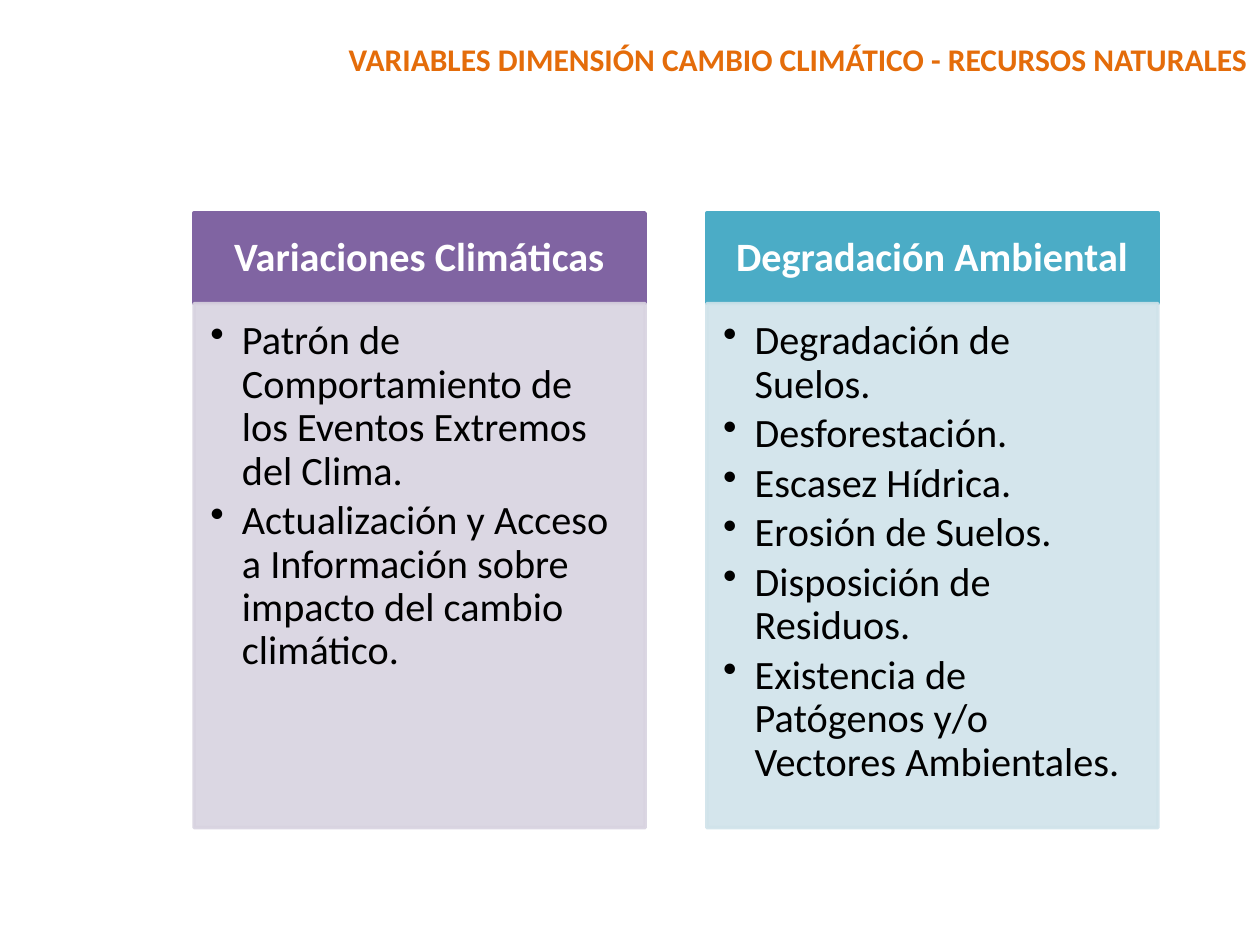
import pptx
import pptx.dml.color
import pptx.enum.shapes
import pptx.enum.text
import pptx.oxml
import pptx.oxml.ns
import pptx.util

Inches, Pt = pptx.util.Inches, pptx.util.Pt
RGBColor = pptx.dml.color.RGBColor
PP_ALIGN = pptx.enum.text.PP_ALIGN
MSO_ANCHOR = pptx.enum.text.MSO_ANCHOR

ORANGE = RGBColor(0xE4, 0x6C, 0x0A)
PURPLE = RGBColor(0x80, 0x64, 0xA2)
PALE_PURPLE = RGBColor(0xD8, 0xD3, 0xE0)
TEAL = RGBColor(0x4B, 0xAC, 0xC6)
PALE_TEAL = RGBColor(0xD0, 0xE3, 0xEA)
WHITE = RGBColor(0xFF, 0xFF, 0xFF)
BLACK = RGBColor(0x00, 0x00, 0x00)


def write(frame, *texts, size=23, color=BLACK, bold=False,
          align=PP_ALIGN.LEFT, anchor=MSO_ANCHOR.TOP,
          insets=(0.1, 0.05, 0.1, 0.05), spacing=0.9, after=0, bullet=False):
    """Fill a text frame with one paragraph per text; insets are left, top, right, bottom."""
    frame.word_wrap = True
    frame.vertical_anchor = anchor
    frame.margin_left, frame.margin_top, frame.margin_right, frame.margin_bottom = map(Inches, insets)
    for index, text in enumerate(texts):
        para = frame.add_paragraph() if index else frame.paragraphs[0]
        para.alignment = align
        para.line_spacing = spacing
        para.space_before = Pt(0)
        para.space_after = Pt(after)
        if bullet:
            para.level = 1
            properties = para._p.get_or_add_pPr()
            properties.set("marL", str(Inches(0.25)))
            properties.set("indent", str(-Inches(0.25)))
            properties.append(pptx.oxml.parse_xml(
                f'<a:buChar {pptx.oxml.ns.nsdecls("a")} char="•"/>'))
        span = para.add_run()
        span.text = text
        span.font.name = "Calibri"
        span.font.size = Pt(size)
        span.font.bold = bold
        span.font.color.rgb = color


def add_panel(group, left, top, width, height, color, opacity=100):
    panel = group.shapes.add_shape(
        pptx.enum.shapes.MSO_SHAPE.RECTANGLE,
        Inches(left), Inches(top), Inches(width), Inches(height))
    panel.shadow.inherit = False
    panel.line.width = Pt(2)
    for fill in (panel.fill, panel.line.fill):
        fill.solid()
        fill.fore_color.rgb = color
    if opacity < 100:
        for tone in panel._element.spPr.iter(pptx.oxml.ns.qn("a:srgbClr")):
            tone.append(pptx.oxml.parse_xml(
                f'<a:alpha {pptx.oxml.ns.nsdecls("a")} val="{opacity * 1000}"/>'))
    return panel


deck = pptx.Presentation()
deck.slide_width, deck.slide_height = Inches(10), Inches(7.5)
page = deck.slides.add_slide(deck.slide_layouts.get_by_name("Title Only"))

title = page.shapes.title
title.left, title.top = Inches(2.13), Inches(0.27)
title.width, title.height = Inches(7.87), Inches(0.4)
write(title.text_frame, "VARIABLES DIMENSIÓN CAMBIO CLIMÁTICO - RECURSOS NATURALES",
      size=18, color=ORANGE, bold=True, align=PP_ALIGN.RIGHT, spacing=1.0)
title.text_frame.auto_size = pptx.enum.text.MSO_AUTO_SIZE.SHAPE_TO_FIT_TEXT

COLUMNS = [
    ("Variaciones Climáticas", PURPLE, PALE_PURPLE, [
        "Patrón de Comportamiento de los Eventos Extremos del Clima.",
        "Actualización y Acceso a Información sobre impacto del cambio climático.",
    ]),
    ("Degradación Ambiental", TEAL, PALE_TEAL, [
        "Degradación de Suelos.",
        "Desforestación.",
        "Escasez Hídrica.",
        "Erosión de Suelos.",
        "Disposición de Residuos.",
        "Existencia de Patógenos y/o Vectores Ambientales.",
    ]),
]
COLUMN_LEFT, COLUMN_TOP, COLUMN_WIDTH, COLUMN_STEP = 1.54, 1.69, 3.58, 4.07
HEADER_HEIGHT, LIST_HEIGHT = 0.72, 4.16

columns_group = page.shapes.add_group_shape()
for number, (heading, strong, pale, variables) in enumerate(COLUMNS):
    left = COLUMN_LEFT + number * COLUMN_STEP
    header = add_panel(columns_group, left, COLUMN_TOP, COLUMN_WIDTH, HEADER_HEIGHT, strong)
    write(header.text_frame, heading, color=WHITE, bold=True, align=PP_ALIGN.CENTER,
          anchor=MSO_ANCHOR.MIDDLE, insets=(0.18, 0.1, 0.18, 0.1))
    variable_list = add_panel(columns_group, left, COLUMN_TOP + HEADER_HEIGHT,
                              COLUMN_WIDTH, LIST_HEIGHT, pale, opacity=90)
    write(variable_list.text_frame, *variables, insets=(0.13, 0.13, 0.18, 0.2),
          after=3.45, bullet=True)

deck.save("out.pptx")
